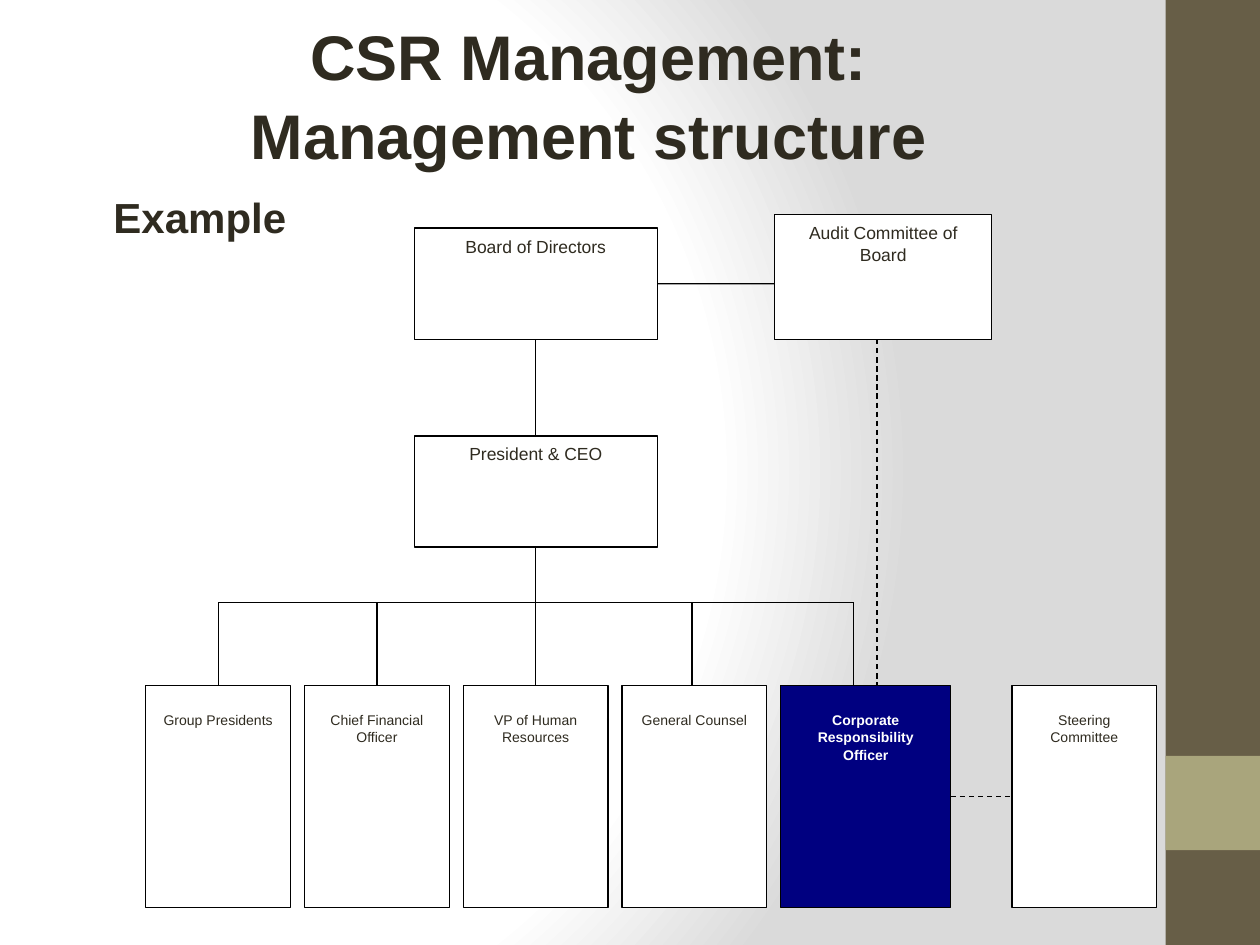
from lxml import etree
from pptx import Presentation
from pptx import util as u
from pptx.dml.color import RGBColor
from pptx.enum import dml, shapes, text
from pptx.oxml import parse_xml
from pptx.oxml.ns import nsdecls, qn

HUES = {
    "ink": "2F2B20", "line": "000000", "white": "FFFFFF", "gray": "DADADA",
    "navy": "000080", "brown": "675E47", "sage": "A9A57C",
}
ROW_X, ROW_Y, STEP = 2.94, 13.82, 3.2
BOX_W, BOX_H = 2.92, 4.47
BUS_Y = 12.14


def hue(name):
    return RGBColor.from_string(HUES[name])


def back(slide):
    slide.background.fill.gradient()
    grad = slide._element.find(".//" + qn("a:gradFill"))
    stops = "".join(
        f'<a:gs pos="{pos}"><a:srgbClr val="{HUES[name]}"/></a:gs>'
        for pos, name in ((0, "white"), (75000, "white"), (100000, "gray")))
    grad.getparent().replace(grad, parse_xml(
        f'<a:gradFill {nsdecls("a")} rotWithShape="1"><a:gsLst>{stops}</a:gsLst>'
        '<a:path path="circle">'
        '<a:fillToRect l="20000" t="50000" r="100000" b="50000"/>'
        '</a:path></a:gradFill>'))


def write(frame, lines, size, tint="ink", bold=False, gap=1.05):
    frame.word_wrap = True
    para = frame.paragraphs[0]
    para.alignment = text.PP_ALIGN.CENTER
    para.line_spacing = gap
    for i, line in enumerate(lines):
        if i:
            para.add_line_break()
        run = para.add_run()
        run.text = line
        font = run.font
        font.name, font.size, font.bold = "Arial", u.Pt(size), bold
        font.color.rgb = hue(tint)


def label(slide, spot, lines, size):
    frame = slide.shapes.add_textbox(*map(u.Cm, spot)).text_frame
    write(frame, lines, size, bold=True)
    return frame


def block(slide, spot, fill):
    rect = slide.shapes.add_shape(shapes.MSO_SHAPE.RECTANGLE, *map(u.Cm, spot))
    rect.shadow.inherit = False
    rect.fill.solid()
    rect.fill.fore_color.rgb = hue(fill)
    rect.line.fill.background()
    return rect


def box(slide, spot, words, size, fill="white", tint="ink", bold=False, top=0.13):
    rect = block(slide, spot, fill)
    rect.line.color.rgb = hue("line")
    rect.line.width = u.Pt(0.75)
    frame = rect.text_frame
    frame.vertical_anchor = text.MSO_ANCHOR.TOP
    frame.margin_top = u.Cm(top)
    write(frame, [words], size, tint, bold)
    return rect


def link(slide, start, end, dash=False):
    wire = slide.shapes.add_connector(
        shapes.MSO_CONNECTOR.STRAIGHT, *map(u.Cm, start + end))
    wire.line.color.rgb = hue("line")
    wire.line.width = u.Pt(0.75)
    if dash:
        wire.line.dash_style = dml.MSO_LINE.DASH
    etree.SubElement(wire._element.spPr, qn("a:effectLst"))
    return wire


def join(slide, first, side, last, edge, dash=False):
    wire = link(slide, (0, 0), (0, 0), dash)
    wire.begin_connect(first, side)
    wire.end_connect(last, edge)


def main():
    deck = Presentation()
    deck.slide_width, deck.slide_height = u.Cm(25.4), u.Cm(19.05)
    slide = deck.slides.add_slide(deck.slide_layouts[6])
    back(slide)
    block(slide, (23.5, 0, 1.9, 19.05), "brown")
    block(slide, (23.5, 15.24, 1.9, 1.9), "sage")

    title = label(slide, (-0.13, 0.74, 24, 2.26),
                  ["CSR Management:", "Management structure"], 36)
    title.vertical_anchor = text.MSO_ANCHOR.MIDDLE
    head = label(slide, (-2.74, 3.68, 13.54, 1.27), ["Example"], 24)
    head.auto_size = text.MSO_AUTO_SIZE.SHAPE_TO_FIT_TEXT

    board = box(slide, (8.35, 4.6, 4.9, 2.24), "Board of Directors", 10)
    chief = box(slide, (8.35, 8.79, 4.9, 2.24), "President & CEO", 10)
    box(slide, (15.62, 4.32, 4.37, 2.52), "Audit Committee of Board", 10)

    names = ["Group Presidents", "Chief Financial Officer",
             "VP of Human Resources", "General Counsel"]
    staff = [box(slide, (ROW_X + i * STEP, ROW_Y, BOX_W, BOX_H), name, 8, top=0.5)
             for i, name in enumerate(names)]
    duty = box(slide, (ROW_X + 4 * STEP, ROW_Y, 3.43, BOX_H),
               "Corporate Responsibility Officer", 8, "navy", "white", True, 0.5)
    steer = box(slide, (20.4, ROW_Y, BOX_W, BOX_H),
                "Steering Committee", 8, top=0.5)

    join(slide, board, 2, chief, 0)
    join(slide, chief, 2, staff[2], 0)
    join(slide, duty, 3, steer, 1, dash=True)

    left = ROW_X + BOX_W / 2
    right = left + 4 * STEP
    link(slide, (left, BUS_Y), (right, BUS_Y))
    for i in (0, 1):
        drop = link(slide, (left + i * STEP, BUS_Y), (left + i * STEP, ROW_Y))
        drop.end_connect(staff[i], 0)
    for x in (13.95, right):
        link(slide, (x, BUS_Y), (x, ROW_Y))
    link(slide, (17.68, 6.84), (17.68, ROW_Y), dash=True)
    link(slide, (15.62, 5.72), (13.25, 5.72)).end_connect(board, 3)
    deck.save("out.pptx")


if __name__ == "__main__":
    main()
